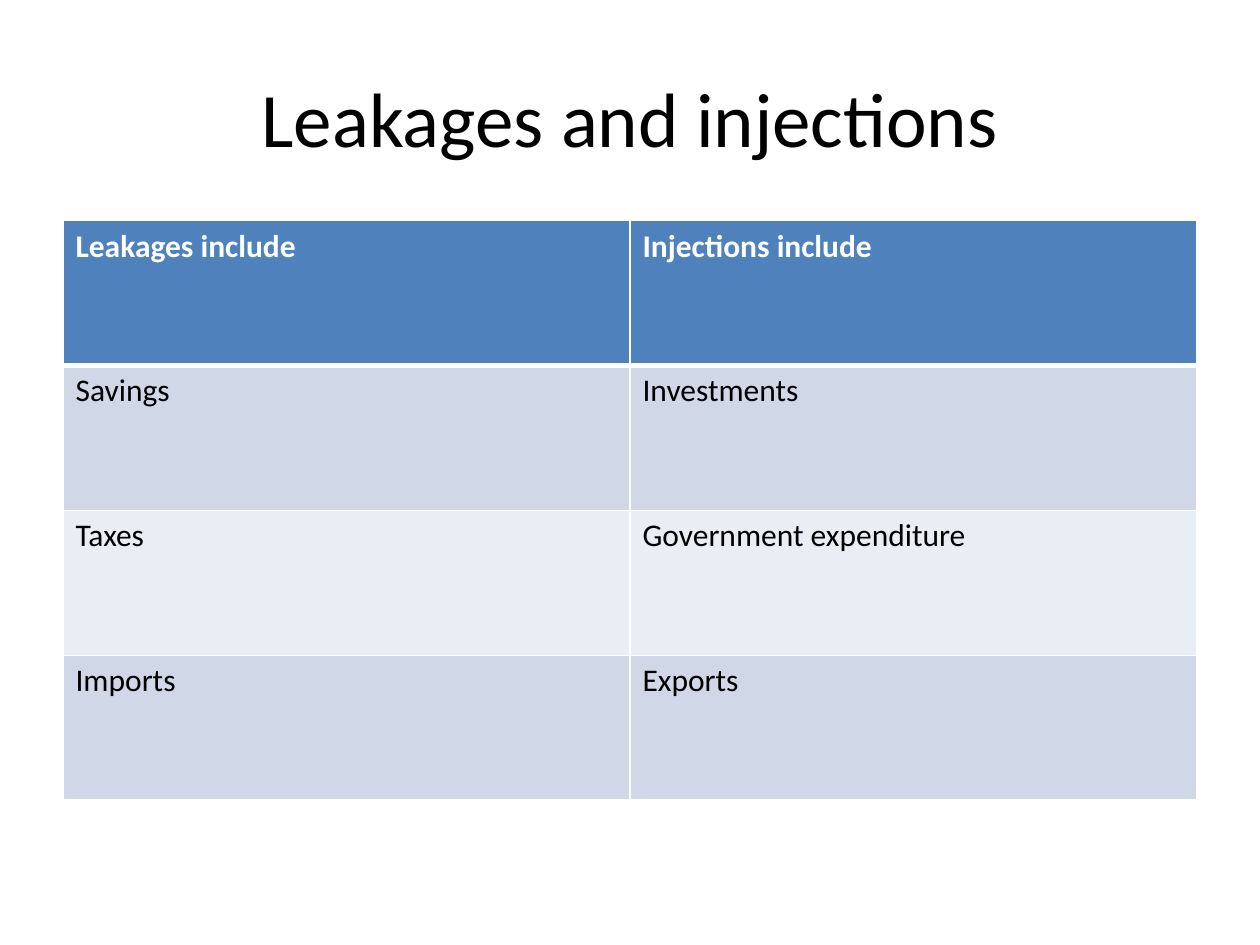
from dataclasses import dataclass

from lxml.etree import SubElement
from pptx import Presentation
from pptx.dml.color import RGBColor as Rgb
from pptx.enum.text import MSO_ANCHOR as Anchor, PP_ALIGN as Align
from pptx.oxml.ns import qn
from pptx.util import Cm, Pt


@dataclass(frozen=True)
class Theme:
    font: str = "Calibri"
    title_size: int = 44
    cell_size: int = 18
    ink: str = "000000"
    header_ink: str = "FFFFFF"
    header_fill: str = "4F81BD"
    bands: tuple = ("D0D8E8", "E9EDF4")
    rule: str = "FFFFFF"
    thin_rule: int = 1
    thick_rule: int = 3


THEME = Theme()
MARGIN, CONTENT_WIDTH = Cm(1.27), Cm(22.86)
FLOWS = [
    ("Leakages include", "Injections include"),
    ("Savings", "Investments"),
    ("Taxes", "Government expenditure"),
    ("Imports", "Exports"),
]


def set_font(paragraph, size, color, bold=False):
    font = paragraph.font
    font.name, font.size, font.bold = THEME.font, Pt(size), bold
    font.color.rgb = Rgb.from_string(color)


def add_title(slide, wording):
    title = slide.shapes.title
    title.left, title.top = MARGIN, Cm(0.76)
    title.width, title.height = CONTENT_WIDTH, Cm(3.18)
    frame = title.text_frame
    frame.text = wording
    frame.vertical_anchor = Anchor.MIDDLE
    heading = frame.paragraphs[0]
    heading.alignment = Align.CENTER
    set_font(heading, THEME.title_size, THEME.ink)


def draw_borders(cell, top, bottom):
    """Rule all four sides; call before filling, as the schema puts lines first."""
    properties = cell._tc.get_or_add_tcPr()
    sides = {"L": THEME.thin_rule, "R": THEME.thin_rule, "T": top, "B": bottom}
    for side, width in sides.items():
        line = SubElement(properties, qn(f"a:ln{side}"), w=str(Pt(width)))
        SubElement(SubElement(line, qn("a:solidFill")), qn("a:srgbClr"), val=THEME.rule)


def style_cell(cell, row):
    is_header = row == 0
    draw_borders(
        cell,
        top=THEME.thick_rule if row == 1 else THEME.thin_rule,
        bottom=THEME.thick_rule if is_header else THEME.thin_rule,
    )
    band = THEME.bands[(row - 1) % len(THEME.bands)]
    cell.fill.solid()
    cell.fill.fore_color.rgb = Rgb.from_string(THEME.header_fill if is_header else band)
    color = THEME.header_ink if is_header else THEME.ink
    set_font(cell.text_frame.paragraphs[0], THEME.cell_size, color, is_header)


def add_flow_table(slide, flows):
    table = slide.shapes.add_table(
        len(flows), len(flows[0]), MARGIN, Cm(4.45), CONTENT_WIDTH, Cm(11.68)
    ).table
    for row, labels in enumerate(flows):
        for column, label in enumerate(labels):
            cell = table.cell(row, column)
            cell.text = label
            style_cell(cell, row)


def main():
    deck = Presentation()
    deck.slide_width, deck.slide_height = Cm(25.4), Cm(19.05)
    slide = deck.slides.add_slide(deck.slide_layouts.get_by_name("Title Only"))
    add_title(slide, "Leakages and injections")
    add_flow_table(slide, FLOWS)
    deck.save("out.pptx")


if __name__ == "__main__":
    main()
